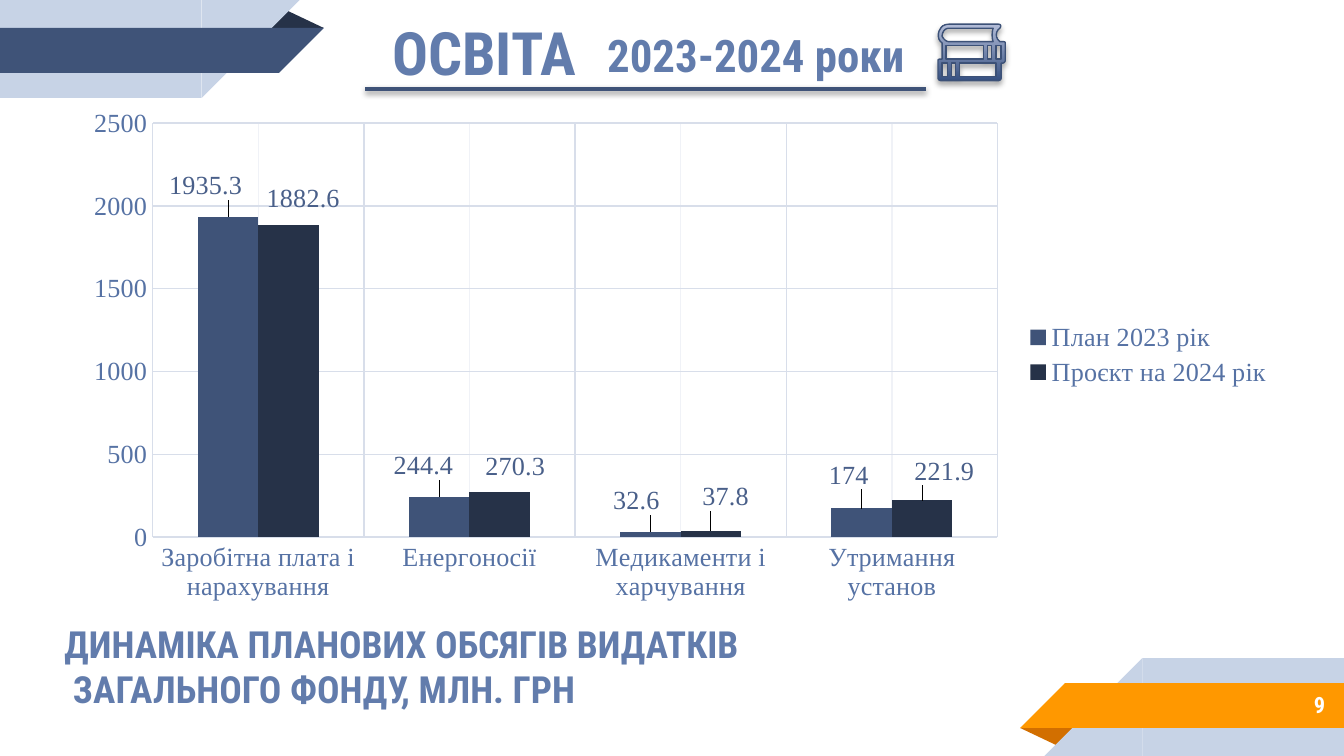
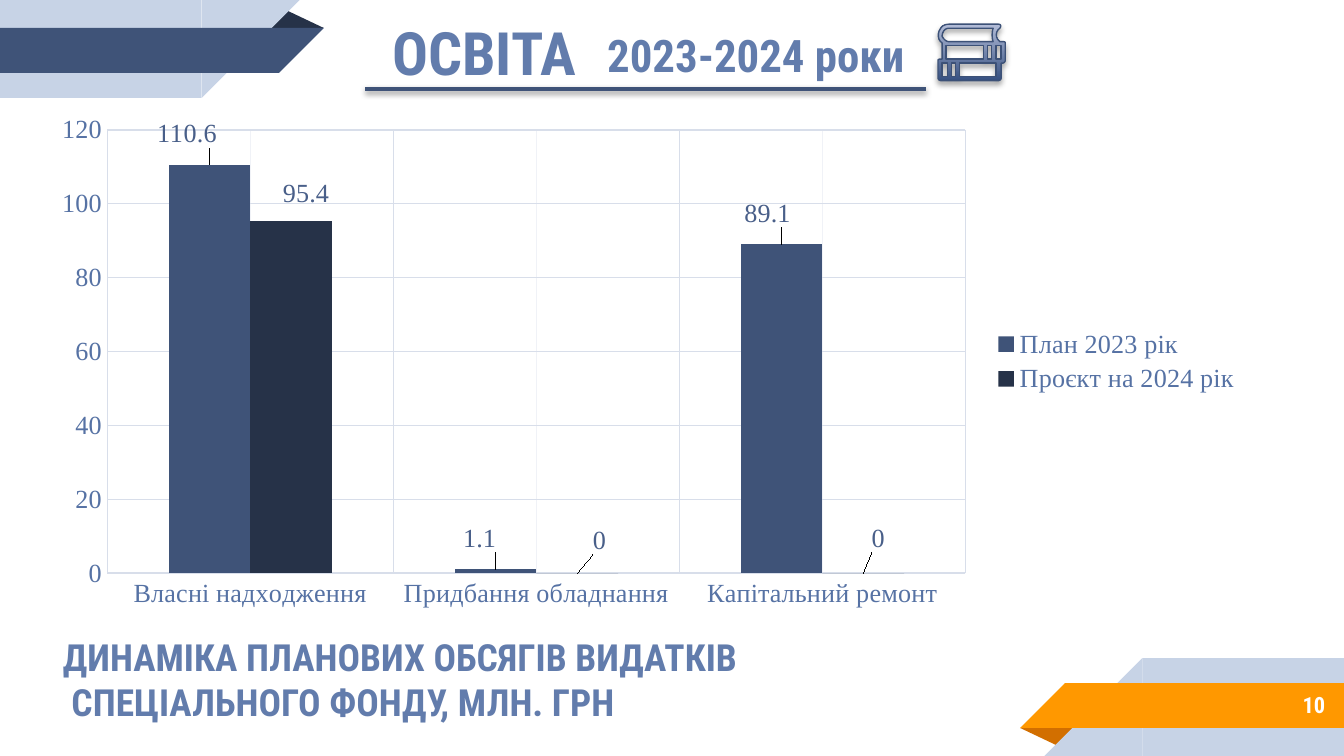
from lxml.etree import SubElement
from pptx import Presentation
from pptx.chart.data import CategoryChartData
from pptx.dml.color import RGBColor
from pptx.enum.chart import XL_CHART_TYPE, XL_LABEL_POSITION, XL_LEGEND_POSITION, XL_TICK_MARK
from pptx.enum.shapes import MSO_CONNECTOR, MSO_SHAPE
from pptx.enum.text import MSO_ANCHOR, PP_ALIGN
from pptx.oxml.ns import qn
from pptx.util import Pt

WIDTH, HEIGHT = 720, 405
HEAD_FONT, CHART_FONT = "Roboto Condensed", "Times New Roman"
NAVY, DARK, PALE = "3F5378", "263248", "C7D3E6"
ORANGE, RUST, WHITE = "FF9800", "D26F00", "FFFFFF"
HEADING, AXIS_TEXT, LABEL_TEXT = "627CAC", "5672A4", "495F89"
GRID, FAINT_GRID = "D8DEEA", "F0F2F7"
ICON_LOW, ICON_HIGH, ICON_EDGE = "365081", "B3BDD8", "3C5177"

SERIES_NAMES = ["План 2023 рік", "Проєкт на 2024 рік"]

# Books icon: a pair is a corner, six numbers are a cubic curve.
ICON_UNIT = 0.72
BOOK_WINDOWS = [(704, 34, 732, 44), (735, 34, 738, 44), (741, 34, 745, 44),
                (701, 47, 705, 57), (708, 47, 711, 57), (714, 47, 741, 57)]
BOOK_PAGES = [(739, 21), (738, 24, 738, 28, 739, 31), (706, 31),
              (704, 31, 702, 29, 701, 27), (701, 24, 703, 21, 706, 21)]
BOOK_OUTLINE = [(706, 18), (704, 18, 701, 19, 700, 21), (697, 25, 698, 30, 701, 32),
                (701, 44), (700, 44), (699, 44, 698, 44, 698, 45),
                (698, 58), (698, 59, 699, 60, 700, 60),
                (743, 60), (744, 60, 745, 59, 745, 58), (745, 47), (746, 47),
                (747, 47, 748, 46, 748, 45), (748, 32), (748, 31, 747, 31, 746, 31),
                (744, 31), (740, 28, 741, 23, 744, 21), (745, 20, 745, 18, 743, 18)]


def color(value):
    return RGBColor.from_string(value)


def style_font(font, name, size, tint, bold=False):
    font.name, font.size, font.bold = name, Pt(size), bold
    font.color.rgb = color(tint)


def style_line(line, tint, width):
    line.color.rgb = color(tint)
    line.width = Pt(width)


def drop_shadow(shape, blur, distance, opacity):
    """Give the shape a black shadow straight below; opacity in percent."""
    properties = shape._element.spPr
    effects = SubElement(properties, qn("a:effectLst"))
    shadow = SubElement(effects, qn("a:outerShdw"), blurRad=str(Pt(blur)),
                        dist=str(Pt(distance)), dir="5400000",
                        algn="t", rotWithShape="0")
    black = SubElement(shadow, qn("a:srgbClr"), val="000000")
    SubElement(black, qn("a:alpha"), val=str(opacity * 1000))


def add_minor_grid(axis, tint, width):
    axis.has_minor_gridlines = True
    grid = axis._element.find(qn("c:minorGridlines"))
    properties = SubElement(grid, qn("c:spPr"))
    line = SubElement(properties, qn("a:ln"), w=str(Pt(width)))
    fill = SubElement(line, qn("a:solidFill"))
    SubElement(fill, qn("a:srgbClr"), val=tint)


def flatten(contour, steps=6):
    """Turn corners and curves into a list of points in EMU."""
    points = []
    for part in contour:
        if len(part) == 2:
            points.append(part)
            continue
        controls = [points[-1], part[:2], part[2:4], part[4:]]
        for step in range(1, steps + 1):
            t = step / steps
            weights = [(1 - t) ** 3, 3 * t * (1 - t) ** 2, 3 * t * t * (1 - t), t ** 3]
            points.append(tuple(sum(w * c[axis] for w, c in zip(weights, controls))
                                for axis in (0, 1)))
    return [(Pt(x * ICON_UNIT), Pt(y * ICON_UNIT)) for x, y in points]


class Report:
    def __init__(self):
        self.deck = Presentation()
        self.deck.slide_width, self.deck.slide_height = Pt(WIDTH), Pt(HEIGHT)
        self.shapes = None

    def page(self, number):
        """Start a page with the shared ribbons, title, icon and number."""
        page = self.deck.slides.add_slide(self.deck.slide_layouts[6])
        page.background.fill.solid()
        page.background.fill.fore_color.rgb = color(WHITE)
        self.shapes = page.shapes
        self.ribbon(DARK, NAVY)
        self.ribbon(RUST, ORANGE, turned=True)
        self.text([str(number)], (600, 365, 117, 25), 12, WHITE,
                  MSO_ANCHOR.MIDDLE, PP_ALIGN.RIGHT)
        self.text(["ОСВІТА"], (203, -27.4, 404.6, 81.4), 32)
        self.text(["2023-2024 роки"], (318.2, 5, 404.6, 46), 24)
        self.rule((195.8, 47.5), (496, 47.5))
        self.books()

    def ribbon(self, fold, band, turned=False):
        """Draw the top left ribbon, or its half turn at the bottom right."""
        pieces = [(MSO_SHAPE.ISOSCELES_TRIANGLE, (142.5, 5, 31, 10), 0, fold)]
        for top, length, depth, tint in [(0, 108, 52.5, PALE), (15, 149.5, 24, band)]:
            pieces += [(MSO_SHAPE.RECTANGLE, (0, top, length, depth), 0, tint),
                       (MSO_SHAPE.RIGHT_TRIANGLE, (length, top, depth, depth), 90, tint)]
        for kind, (left, top, width, height), angle, tint in pieces:
            if turned:
                left, top, angle = WIDTH - left - width, HEIGHT - top - height, angle + 180
            piece = self.shapes.add_shape(kind, Pt(left), Pt(top), Pt(width), Pt(height))
            piece.rotation = angle
            piece.shadow.inherit = False
            piece.fill.solid()
            piece.fill.fore_color.rgb = color(tint)
            piece.line.fill.background()
            if kind == MSO_SHAPE.ISOSCELES_TRIANGLE:
                piece.adjustments[0] = 0.32

    def text(self, lines, place, size, tint=HEADING,
             anchor=MSO_ANCHOR.BOTTOM, align=PP_ALIGN.LEFT):
        box = self.shapes.add_textbox(*map(Pt, place))
        frame = box.text_frame
        frame.word_wrap = True
        frame.vertical_anchor = anchor
        frame.margin_left = frame.margin_right = Pt(7.2)
        frame.margin_top = frame.margin_bottom = Pt(7.2)
        frame.text = "\n".join(lines)
        for para in frame.paragraphs:
            para.alignment = align
            style_font(para.font, HEAD_FONT, size, tint, bold=True)

    def rule(self, start, end):
        line = self.shapes.add_connector(MSO_CONNECTOR.STRAIGHT, *map(Pt, start + end))
        style_line(line.line, NAVY, 2)
        drop_shadow(line, 3.1, 1.6, 38)

    def books(self):
        windows = [[(left, top), (right, top), (right, bottom), (left, bottom)]
                   for left, top, right, bottom in BOOK_WINDOWS]
        first, *others = map(flatten, [BOOK_OUTLINE, BOOK_PAGES, *windows])
        builder = self.shapes.build_freeform(*first[0])
        builder.add_line_segments(first[1:], close=True)
        for contour in others:
            builder.move_to(*contour[0])
            builder.add_line_segments(contour[1:], close=True)
        icon = builder.convert_to_shape()
        icon.fill.gradient()
        icon.fill.gradient_angle = 90
        for stop, tint in zip(icon.fill.gradient_stops, [ICON_LOW, ICON_HIGH]):
            stop.color.rgb = color(tint)
        style_line(icon.line, ICON_EDGE, 0.75)
        drop_shadow(icon, 3.1, 1.8, 35)

    def columns(self, place, categories, values, shifts):
        """Add the column chart; shifts move each value label, in points."""
        data = CategoryChartData()
        data.categories = categories
        for name, numbers in zip(SERIES_NAMES, values):
            data.add_series(name, numbers)
        chart = self.shapes.add_chart(XL_CHART_TYPE.COLUMN_CLUSTERED,
                                      *map(Pt, place), data).chart
        style_font(chart.font, CHART_FONT, 14, DARK)
        chart.has_title = False
        chart.has_legend = True
        chart.legend.position = XL_LEGEND_POSITION.RIGHT
        chart.legend.include_in_layout = False
        style_font(chart.legend.font, CHART_FONT, 14, AXIS_TEXT)
        for axis in (chart.category_axis, chart.value_axis):
            axis.major_tick_mark = axis.minor_tick_mark = XL_TICK_MARK.NONE
            style_font(axis.tick_labels.font, CHART_FONT, 14, AXIS_TEXT)
            axis.format.line.fill.background()
            axis.has_major_gridlines = True
            style_line(axis.major_gridlines.format.line, GRID, 0.75)
        add_minor_grid(chart.category_axis, FAINT_GRID, 0.75)

        plot = chart.plots[0]
        plot.gap_width, plot.overlap = 150, 0
        plot.vary_by_categories = False
        for series, tint, moves in zip(plot.series, [NAVY, DARK], shifts):
            series.format.fill.solid()
            series.format.fill.fore_color.rgb = color(tint)
            series.invert_if_negative = False
            labels = series.data_labels
            labels.show_value = True
            labels.position = XL_LABEL_POSITION.OUTSIDE_END
            style_font(labels.font, CHART_FONT, 14, LABEL_TEXT)
            for index, move in enumerate(moves):
                label = series.points[index].data_label
                label.position = XL_LABEL_POSITION.OUTSIDE_END
                style_font(label.font, CHART_FONT, 14, LABEL_TEXT)
                self.shift_label(labels._element, index, move, place[2:])

    @staticmethod
    def shift_label(labels, index, move, chart_size):
        label = labels.findall(qn("c:dLbl"))[index]
        layout = SubElement(label, qn("c:layout"))
        label.insert(1, layout)
        manual = SubElement(layout, qn("c:manualLayout"))
        for axis, distance, extent in zip("xy", move, chart_size):
            SubElement(manual, qn(f"c:{axis}"), val=f"{distance / extent:.4f}")


def main():
    report = Report()
    plan_shifts = [(-12, -6), (-8.5, -6), (-7.5, -6), (-7, -7)]
    caption = "ДИНАМІКА ПЛАНОВИХ ОБСЯГІВ ВИДАТКІВ"

    report.page(9)
    report.columns((37.4, 52.6, 651.6, 275),
                   ["Заробітна плата і нарахування", "Енергоносії",
                    "Медикаменти і харчування", "Утримання установ"],
                   [(1935.3, 244.4, 32.6, 174), (1882.6, 270.3, 37.8, 221.9)],
                   [plan_shifts, [(8, -4), (8.5, -3), (8, -7.5), (12, -5)]])
    report.text([caption, " ЗАГАЛЬНОГО ФОНДУ, МЛН. ГРН"], (27.4, 342, 504.7, 46), 20)

    report.page(10)
    report.text([caption, " СПЕЦІАЛЬНОГО ФОНДУ, МЛН. ГРН"], (26.6, 349.2, 527, 46), 20)
    report.columns((20.2, 56.2, 651.6, 275),
                   ["Власні надходження", "Придбання обладнання", "Капітальний ремонт"],
                   [(110.6, 1.1, 89.1), (95.4, 0, 0)],
                   [plan_shifts[:3], [(8, -4), (12, -7), (8, -8)]])

    report.deck.save("out.pptx")


if __name__ == "__main__":
    main()
